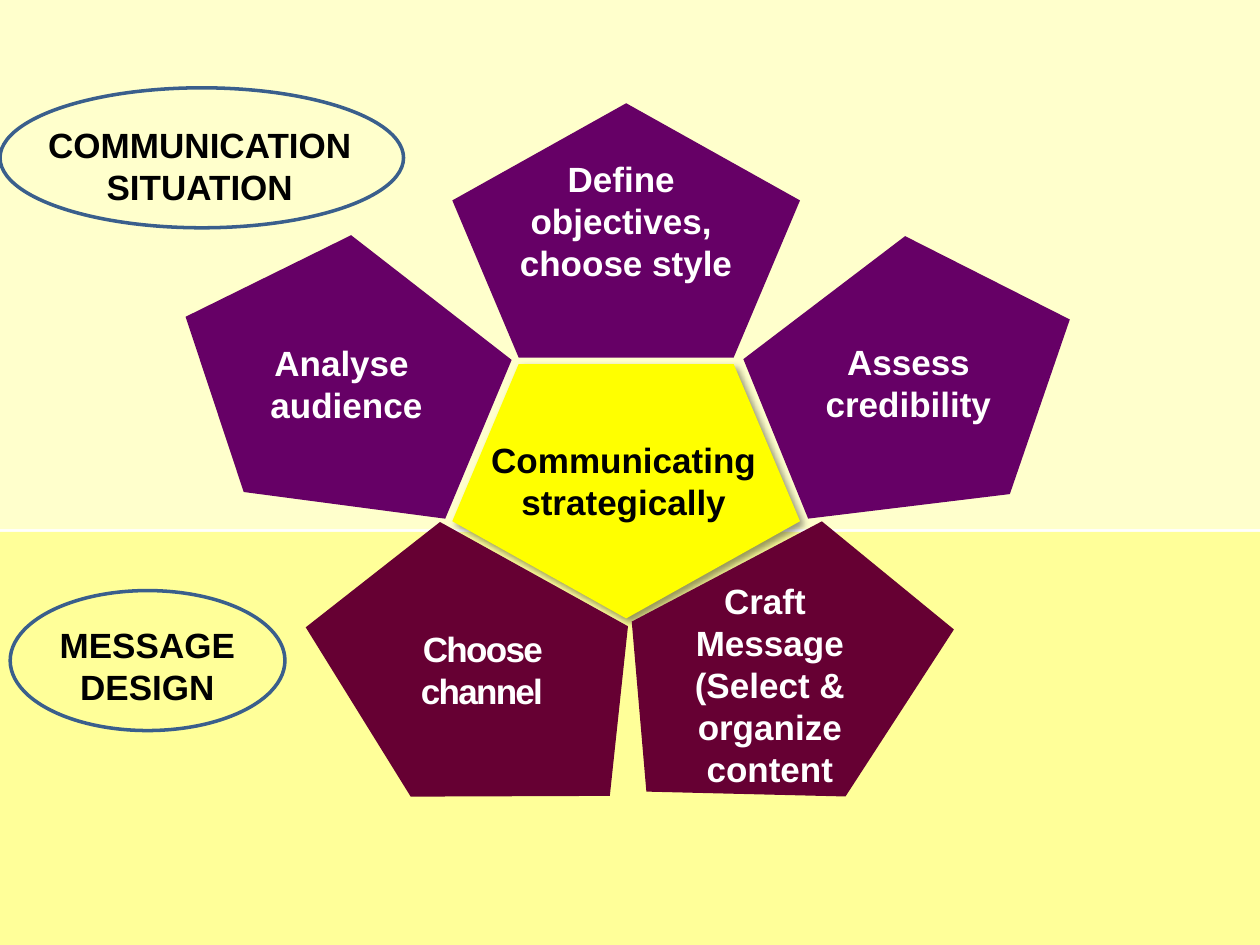
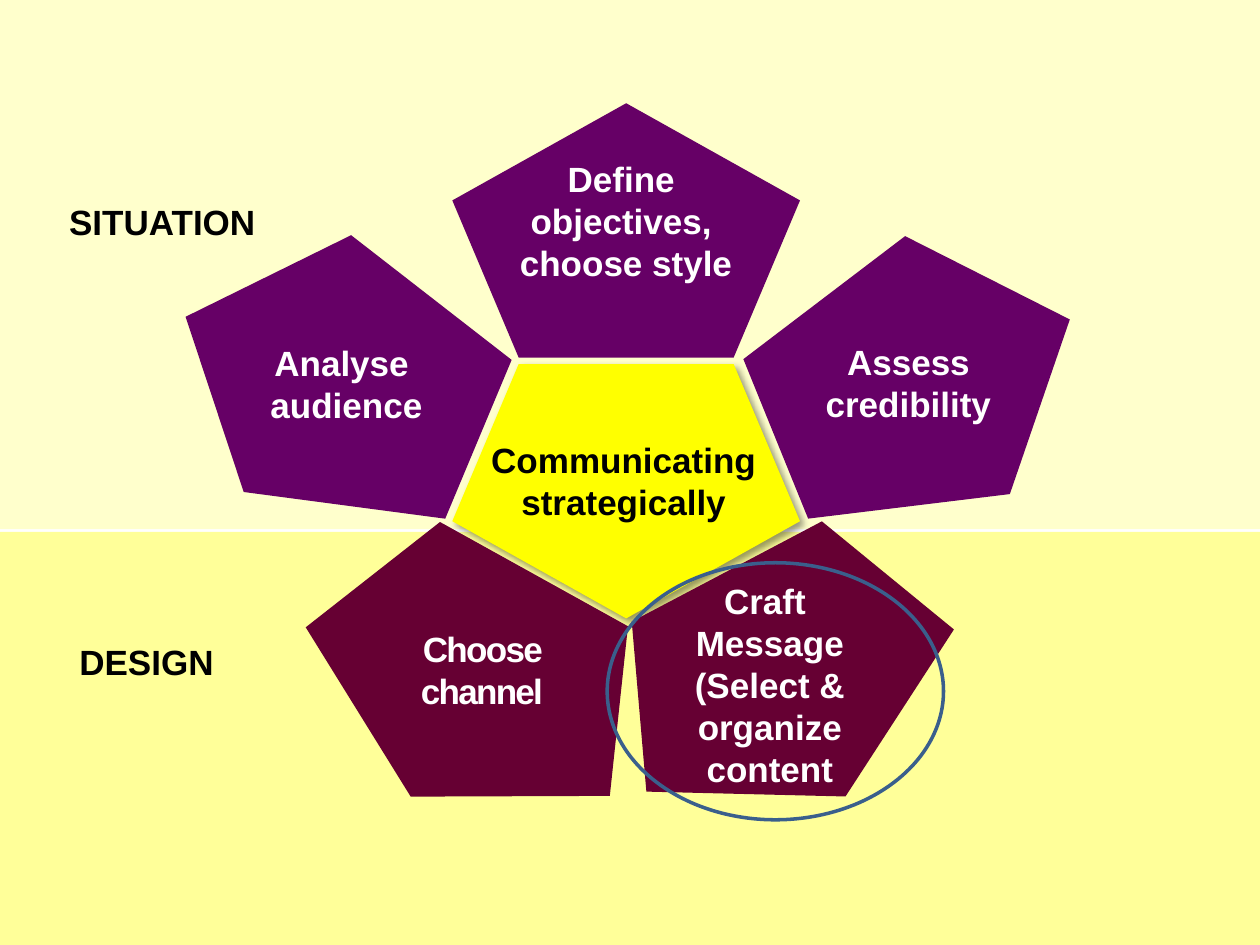
"""Two slides showing the pentagon model of strategic communication."""
from lxml.etree import SubElement
from pptx import Presentation
from pptx.dml.color import RGBColor as RGB
from pptx.enum.shapes import MSO_SHAPE as Shape
from pptx.enum.text import MSO_AUTO_SIZE as Fit, PP_ALIGN as Align
from pptx.oxml.ns import qn
from pptx.util import Pt

THEME = {
    "situation_band": RGB.from_string("FFFFCC"),
    "design_band": RGB.from_string("FFFF99"),
    "core": RGB.from_string("FFFF00"),
    "situation": RGB.from_string("660066"),
    "design": RGB.from_string("660033"),
    "ring": RGB.from_string("3A5F8C"),
    "light": RGB.from_string("FFFFFF"),
    "dark": RGB.from_string("000000"),
    "ring_width": Pt(2),
    "line_pitch": Pt(24),
    "font": {"name": "Arial", "size": Pt(20), "bold": True},
}

WIDE, HIGH = 198.7, 145.4
SIDE_WIDE, SIDE_HIGH = 159.1, 181.4
BANDS = [
    ((-7, 0, 729, 302.4), "situation_band"),
    ((-7, 304, 740, 236), "design_band"),
]
PENTAGONS = [
    ((258.5, 208, WIDE, HIGH), 0, "v", "core"),
    ((258.5, 59, WIDE, HIGH), 0, "", "situation"),
    ((110.2, 125.3, SIDE_WIDE, SIDE_HIGH), 112.7, "v", "situation"),
    ((447.8, 126, SIDE_WIDE, SIDE_HIGH), 247.9, "hv", "situation"),
    ((170.6, 319, WIDE, HIGH), 29, "v", "design"),
    ((349.9, 318.2, WIDE, HIGH), 332.2, "v", "design"),
]
STEPS = [
    ("Define \nobjectives, \nchoose style", (289.4, 86.4, 136.8, 80), "light", False),
    ("Communicating\nstrategically", (272.9, 247, 167, 55.4), "dark", False),
    ("Analyse \naudience", (146.9, 191.5, 102.2, 55.4), "light", False),
    ("Choose \nchannel", (231.8, 355, 87.1, 55.4), "light", False),
    ("Assess\ncredibility", (464.4, 190.8, 109.4, 55.4), "light", False),
    ("Craft \nMessage (Select & organize content", (377.3, 327.6, 125.3, 128.2), "light", True),
]
SLIDES = [
    {
        "captions": [
            ("MESSAGE DESIGN", (15.1, 352.8, 138.2, 55.4), "dark", True),
            ("COMMUNICATION SITUATION", (13, 67, 202.3, 55.4), "dark", True),
        ],
        "align": Align.CENTER,
        "rings": [(0, 50.2, 230.6, 80), (5.8, 337.5, 157, 80)],
    },
    {
        "captions": [
            ("DESIGN", (38.2, 362.2, 92.2, 31.7), "dark", False),
            ("SITUATION", (32.4, 110.9, 121.7, 31.7), "dark", False),
        ],
        "align": Align.LEFT,
        "rings": [(347, 321.6, 192.2, 146.9)],
    },
]


def add_figure(slide, preset, box, colour=None):
    figure = slide.shapes.add_shape(preset, *map(Pt, box))
    figure.shadow.inherit = False
    if colour:
        figure.fill.solid()
        figure.fill.fore_color.rgb = THEME[colour]
        figure.line.fill.background()
    else:
        figure.fill.background()
        figure.line.color.rgb = THEME["ring"]
        figure.line.width = THEME["ring_width"]
    return figure


def add_label(slide, wording, box, colour, wrap, align=Align.CENTER):
    label = slide.shapes.add_textbox(*map(Pt, box))
    label.text_frame.text = wording
    label.text_frame.word_wrap = wrap
    label.text_frame.auto_size = Fit.SHAPE_TO_FIT_TEXT
    for line in label.text_frame.paragraphs:
        line.alignment = align
        line.line_spacing = THEME["line_pitch"]
        for run in line.runs:
            for attribute, value in THEME["font"].items():
                setattr(run.font, attribute, value)
            run.font.color.rgb = THEME[colour]
    return label


deck = Presentation()
deck.slide_width, deck.slide_height = Pt(720), Pt(540)

for content in SLIDES:
    slide = deck.slides.add_slide(deck.slide_layouts[6])

    for box, colour in BANDS:
        add_figure(slide, Shape.RECTANGLE, box, colour)

    for box, angle, flips, colour in PENTAGONS:
        petal = add_figure(slide, Shape.REGULAR_PENTAGON, box, colour)
        petal.rotation = angle
        for axis in flips:
            petal.element.spPr.xfrm.set(f"flip{axis.upper()}", "1")
        if colour == "core":
            effects = petal.element.spPr.find(qn("a:effectLst"))
            shadow = SubElement(effects, qn("a:outerShdw"), blurRad=str(Pt(4)),
                                dist=str(Pt(3)), dir="2700000", algn="tl", rotWithShape="0")
            tint = SubElement(shadow, qn("a:srgbClr"), val=str(THEME["dark"]))
            SubElement(tint, qn("a:alpha"), val="40000")

    for step in STEPS:
        label = add_label(slide, *step)
        if step[0].startswith("Choose"):
            for properties in label.element.iter(qn("a:rPr")):
                properties.set("spc", "-100")

    for caption in content["captions"]:
        add_label(slide, *caption, align=content["align"])

    for box in content["rings"]:
        add_figure(slide, Shape.OVAL, box)

deck.save("out.pptx")
